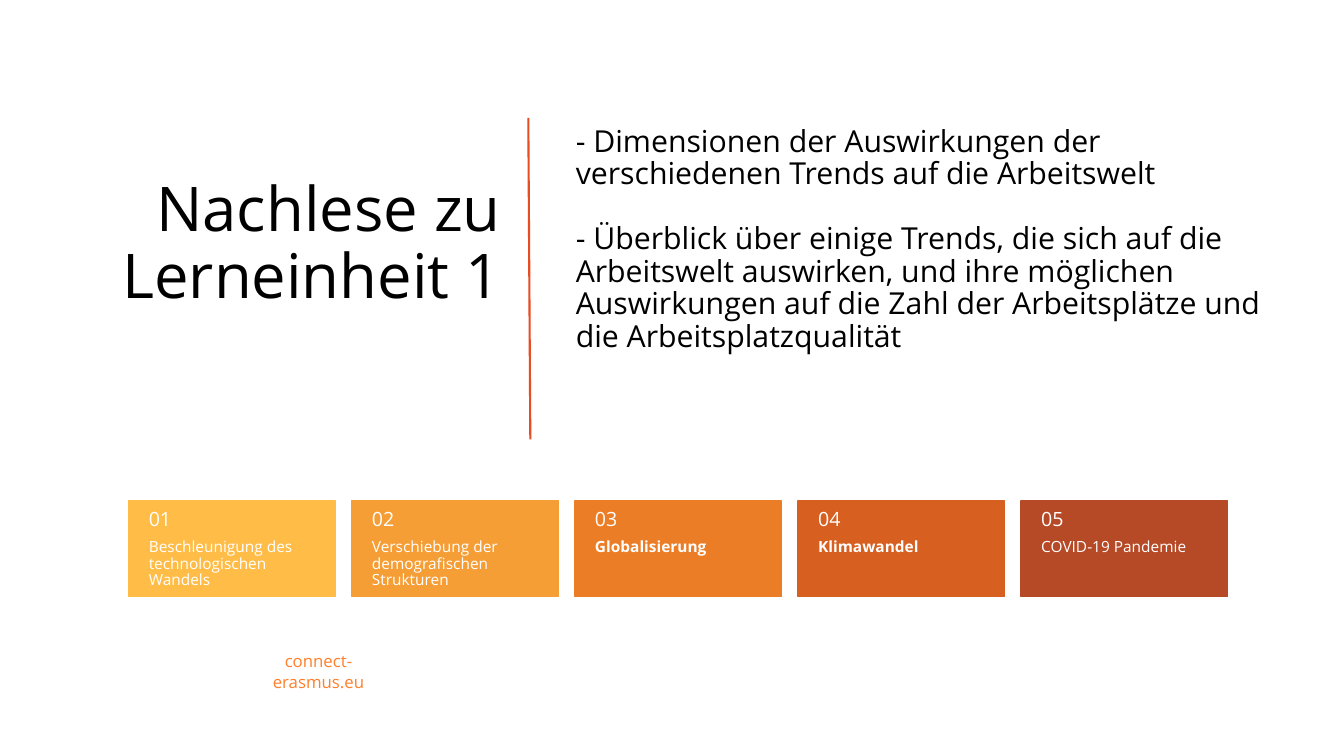
from dataclasses import dataclass

from lxml import etree
from pptx import Presentation
from pptx.dml.color import RGBColor
from pptx.enum.shapes import MSO_CONNECTOR, MSO_SHAPE
from pptx.enum.text import MSO_ANCHOR, MSO_AUTO_SIZE, PP_ALIGN
from pptx.oxml.ns import qn
from pptx.util import Inches, Pt

STRAIGHT, RECT = MSO_CONNECTOR.STRAIGHT, MSO_SHAPE.RECTANGLE
TOP, MIDDLE, BOTTOM = MSO_ANCHOR.TOP, MSO_ANCHOR.MIDDLE, MSO_ANCHOR.BOTTOM
LEFT, CENTER, RIGHT = PP_ALIGN.LEFT, PP_ALIGN.CENTER, PP_ALIGN.RIGHT
FIT_NONE = MSO_AUTO_SIZE.NONE
WIDTH, HEIGHT = Inches(13.33), Inches(7.5)


@dataclass(frozen=True)
class Theme:
    """Font, colours and type sizes of the slide."""
    font: str = "Open Sans"
    text: str = "000000"
    on_card: str = "FFFFFF"
    web: str = "FF7F2A"
    divider: str = "E84C22"
    title_size: float = 44
    points_size: float = 21.6
    number_size: float = 14
    web_size: float = 12
    label_size: float = 11


THEME = Theme()
CARD_X, CARD_Y, CARD_W, CARD_PITCH = 9.57, 66.27, 15.38, 16.6
NUMBER_H, LABEL_H = 5.07, 7.6
POINTS = [
    "- Dimensionen der Auswirkungen der verschiedenen Trends auf die Arbeitswelt",
    "- Überblick über einige Trends, die sich auf die Arbeitswelt auswirken, und ihre "
    "möglichen Auswirkungen auf die Zahl der Arbeitsplätze und die Arbeitsplatzqualität",
]
TRENDS = [
    ("Beschleunigung des technologischen Wandels", "FFBD47", False),
    ("Verschiebung der demografischen Strukturen", "F69E36", False),
    ("Globalisierung", "EB7D26", True),
    ("Klimawandel", "D75F20", True),
    ("COVID-19 Pandemie", "B64926", False),
]


def box(x, y, w, h):
    """Turn percentages of the slide's size into lengths."""
    return [int(share * side / 100)
            for share, side in ((x, WIDTH), (y, HEIGHT), (w, WIDTH), (h, HEIGHT))]


def write(sp, lines, size, color, align=LEFT, anchor=TOP, bold=False,
          spacing=0.9, gap=0, insets=(0.1, 0.05)):
    """Fill a shape with unbulleted, formatted paragraphs."""
    tf = sp.text_frame
    tf.text = "\n".join(lines)
    tf.word_wrap, tf.auto_size, tf.vertical_anchor = True, FIT_NONE, anchor
    tf.margin_left = tf.margin_right = Inches(insets[0])
    tf.margin_top = tf.margin_bottom = Inches(insets[1])
    for i, p in enumerate(tf.paragraphs):
        p.alignment, p.line_spacing = align, spacing
        p.space_before, p.space_after = Pt(gap if i else 0), Pt(0)
        pPr = p._p.get_or_add_pPr()
        pPr.set("marL", "0")
        pPr.set("indent", "0")
        etree.SubElement(pPr, qn("a:buNone"))
        for r in p.runs:
            r.font.name, r.font.size, r.font.bold = THEME.font, Pt(size), bold
            r.font.color.rgb = RGBColor.from_string(color)


def place(sp, *area):
    """Move a placeholder to an area given in percentages."""
    sp.left, sp.top, sp.width, sp.height = box(*area)
    return sp


def add_divider(s, x1, y1, x2, y2):
    """Draw the line between title and points."""
    line = s.shapes.add_connector(STRAIGHT, *box(x1, y1, x2, y2))
    line.line.color.rgb = RGBColor.from_string(THEME.divider)
    line.line.width = Pt(1.5)
    etree.SubElement(line._element.spPr, qn("a:effectLst"))


def add_card(shapes, column, label, color, bold):
    """Add one numbered trend card in its column."""
    x = CARD_X + column * CARD_PITCH
    card = shapes.add_shape(RECT, *box(x, CARD_Y, CARD_W, NUMBER_H + LABEL_H))
    card.shadow.inherit = False
    card.fill.solid()
    card.fill.fore_color.rgb = card.line.color.rgb = RGBColor.from_string(color)
    card.line.width = Pt(1)
    text = shapes.add_textbox(*box(x, CARD_Y + NUMBER_H, CARD_W, LABEL_H))
    write(text, [label], THEME.label_size, THEME.on_card, bold=bold, insets=(0.2, 0))
    number = shapes.add_textbox(*box(x, CARD_Y, CARD_W, NUMBER_H))
    write(number, [f"{column + 1:02}"], THEME.number_size, THEME.on_card,
          anchor=MIDDLE, insets=(0.2, 0))


def main():
    """Build and save the slide."""
    prs = Presentation()
    prs.slide_width, prs.slide_height = WIDTH, HEIGHT
    s = prs.slides.add_slide(prs.slide_layouts[1])
    title = place(s.shapes.title, 3.98, 14.53, 34.06, 27.33)
    write(title, ["Nachlese zu Lerneinheit 1"], THEME.title_size, THEME.text,
          align=RIGHT, anchor=BOTTOM)
    points = place(s.placeholders[1], 42.09, 16, 53.11, 32)
    write(points, POINTS, THEME.points_size, THEME.text, gap=23)
    add_divider(s, 39.31, 15.6, 39.46, 58.13)
    cards = s.shapes.add_group_shape()
    for column, trend in enumerate(TRENDS):
        add_card(cards.shapes, column, *trend)
    web = s.shapes.add_textbox(*box(17.1, 86.8, 13.2, 4))
    write(web, ["connect-erasmus.eu"], THEME.web_size, THEME.web,
          align=CENTER, anchor=MIDDLE, spacing=1.0)
    prs.save("out.pptx")


if __name__ == "__main__":
    main()
